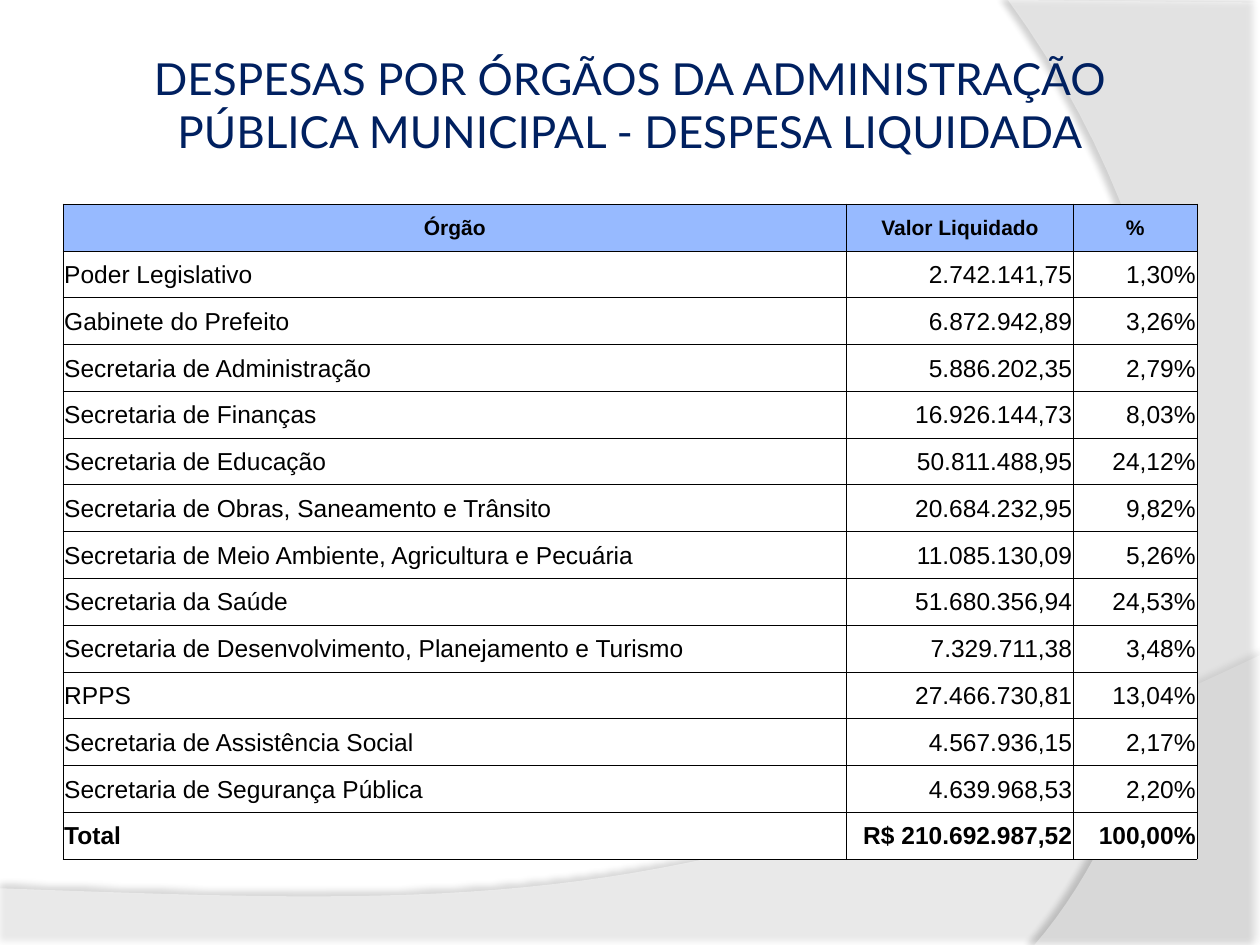
from lxml.etree import SubElement
from pptx import Presentation
from pptx.dml.color import RGBColor
from pptx.enum.text import MSO_ANCHOR, MSO_AUTO_SIZE, PP_ALIGN
from pptx.oxml.ns import qn
from pptx.util import Inches, Pt

# Content
TITLE = "DESPESAS POR ÓRGÃOS DA ADMINISTRAÇÃO PÚBLICA MUNICIPAL - DESPESA LIQUIDADA"
HEADER = ("Órgão", "Valor Liquidado", "%")
EXPENSES = [
    ("Poder Legislativo", "2.742.141,75", "1,30%"),
    ("Gabinete do Prefeito", "6.872.942,89", "3,26%"),
    ("Secretaria de Administração", "5.886.202,35", "2,79%"),
    ("Secretaria de Finanças", "16.926.144,73", "8,03%"),
    ("Secretaria de Educação", "50.811.488,95", "24,12%"),
    ("Secretaria de Obras, Saneamento e Trânsito", "20.684.232,95", "9,82%"),
    ("Secretaria de Meio Ambiente, Agricultura e Pecuária", "11.085.130,09", "5,26%"),
    ("Secretaria da Saúde", "51.680.356,94", "24,53%"),
    ("Secretaria de Desenvolvimento, Planejamento e Turismo", "7.329.711,38", "3,48%"),
    ("RPPS", "27.466.730,81", "13,04%"),
    ("Secretaria de Assistência Social", "4.567.936,15", "2,17%"),
    ("Secretaria de Segurança Pública", "4.639.968,53", "2,20%"),
]
TOTAL = ("Total", "R$ 210.692.987,52", "100,00%")

# Background waves: corners, then a curve (four control points) closing the outline
WAVES = [
    {"corners": [(0, 7.51), (10, 7.51)],
     "curve": [(10, 5.2), (5.59, 7.29), (3.91, 7.19), (0, 7.05)],
     "opacity": 45, "shadow": {"opacity": 35, "blur": 4, "distance": 3.5, "angle": 270}},
    {"corners": [(10, 0.02), (10, 7.5)],
     "curve": [(8.21, 7.5), (9.35, 6.19), (10.18, 3), (8, 0)],
     "opacity": 40, "shadow": {"opacity": 45, "blur": 4, "distance": 4, "angle": 180}},
]

THEME = {
    "title_font": "Lato", "table_font": "Arial",
    "title_size": 25.2, "header_size": 12, "body_size": 14,
    "navy": "002060", "black": "000000", "white": "FFFFFF", "header_fill": "97BAFF",
    "border_width": 0.5,
}
TABLE_BOX = (0.5, 1.62, 9, 5.2)
COLUMN_WIDTHS = (6.22, 1.8, 0.98)
CURVE_STEPS = 40


def write_text(frame, text, *, font, size, color, bold=False, align=PP_ALIGN.LEFT):
    paragraph = frame.paragraphs[0]
    paragraph.alignment = align
    run = paragraph.add_run()
    run.text = text
    run.font.name = font
    run.font.size = Pt(size)
    run.font.bold = bold
    run.font.color.rgb = RGBColor.from_string(color)


def add_solid_color(parent, color, opacity=100):
    color_element = SubElement(parent, qn("a:srgbClr"), val=color)
    SubElement(color_element, qn("a:alpha"), val=str(opacity * 1000))


def curve_points(controls):
    for step in range(CURVE_STEPS + 1):
        t = step / CURVE_STEPS
        weights = ((1 - t) ** 3, 3 * t * (1 - t) ** 2, 3 * t * t * (1 - t), t ** 3)
        yield tuple(sum(w * point[axis] for w, point in zip(weights, controls))
                    for axis in (0, 1))


def add_wave(slide, corners, curve, opacity, shadow):
    outline = [(Inches(x), Inches(y)) for x, y in [*corners, *curve_points(curve)]]
    builder = slide.shapes.build_freeform(*outline[0])
    builder.add_line_segments(outline[1:], close=True)
    shape = builder.convert_to_shape()
    shape.line.fill.background()
    shape.fill.solid()
    shape.fill.fore_color.rgb = RGBColor.from_string(THEME["white"])
    properties = shape.element.spPr
    fill_color = properties.find(qn("a:solidFill")).find(qn("a:srgbClr"))
    SubElement(fill_color, qn("a:alpha"), val=str(opacity * 1000))

    # Soft shadow, visible through the translucent fill
    shape.shadow.inherit = False
    outer = SubElement(properties.find(qn("a:effectLst")), qn("a:outerShdw"),
                       blurRad=str(Pt(shadow["blur"])), dist=str(Pt(shadow["distance"])),
                       dir=str(shadow["angle"] * 60000), algn="ctr", rotWithShape="0")
    add_solid_color(outer, THEME["black"], shadow["opacity"])


def add_title(slide):
    title = slide.shapes.title
    title.left, title.top = Inches(0.5), Inches(0.32)
    title.width, title.height = Inches(9), Inches(1.02)
    frame = title.text_frame
    frame.word_wrap = True
    frame.auto_size = MSO_AUTO_SIZE.NONE
    frame.vertical_anchor = MSO_ANCHOR.MIDDLE
    frame.margin_left = frame.margin_right = Inches(0.05)
    frame.margin_top = frame.margin_bottom = Inches(0.05)
    write_text(frame, TITLE, font=THEME["title_font"], size=THEME["title_size"],
               color=THEME["navy"], align=PP_ALIGN.CENTER)
    # Bring the title in front of the waves
    title.element.getparent().append(title.element)


def format_cell(cell, fill):
    cell.vertical_anchor = MSO_ANCHOR.MIDDLE
    cell.margin_left = cell.margin_right = cell.margin_top = Inches(0.01)
    cell.margin_bottom = 0
    properties = cell._tc.get_or_add_tcPr()
    for side in ("a:lnL", "a:lnR", "a:lnT", "a:lnB"):
        line = SubElement(properties, qn(side), w=str(Pt(THEME["border_width"])))
        add_solid_color(SubElement(line, qn("a:solidFill")), THEME["black"])
    cell.fill.solid()
    cell.fill.fore_color.rgb = RGBColor.from_string(fill)


def add_expense_table(slide):
    rows = [HEADER, *EXPENSES, TOTAL]
    box = [Inches(value) for value in TABLE_BOX]
    table = slide.shapes.add_table(len(rows), len(HEADER), *box).table
    for column, width in zip(table.columns, COLUMN_WIDTHS):
        column.width = Inches(width)
    for row_index, values in enumerate(rows):
        table.rows[row_index].height = Inches(TABLE_BOX[3] / len(rows))
        is_header = values is HEADER
        for column_index, value in enumerate(values):
            cell = table.cell(row_index, column_index)
            format_cell(cell, THEME["header_fill" if is_header else "white"])
            body_align = PP_ALIGN.RIGHT if column_index else PP_ALIGN.LEFT
            write_text(cell.text_frame, value, font=THEME["table_font"],
                       size=THEME["header_size" if is_header else "body_size"],
                       color=THEME["black"], bold=is_header or values is TOTAL,
                       align=PP_ALIGN.CENTER if is_header else body_align)


def main():
    presentation = Presentation()
    presentation.slide_width, presentation.slide_height = Inches(10), Inches(7.5)
    slide = presentation.slides.add_slide(presentation.slide_layouts[5])
    for wave in WAVES:
        add_wave(slide, **wave)
    add_title(slide)
    add_expense_table(slide)
    presentation.save("out.pptx")


if __name__ == "__main__":
    main()
